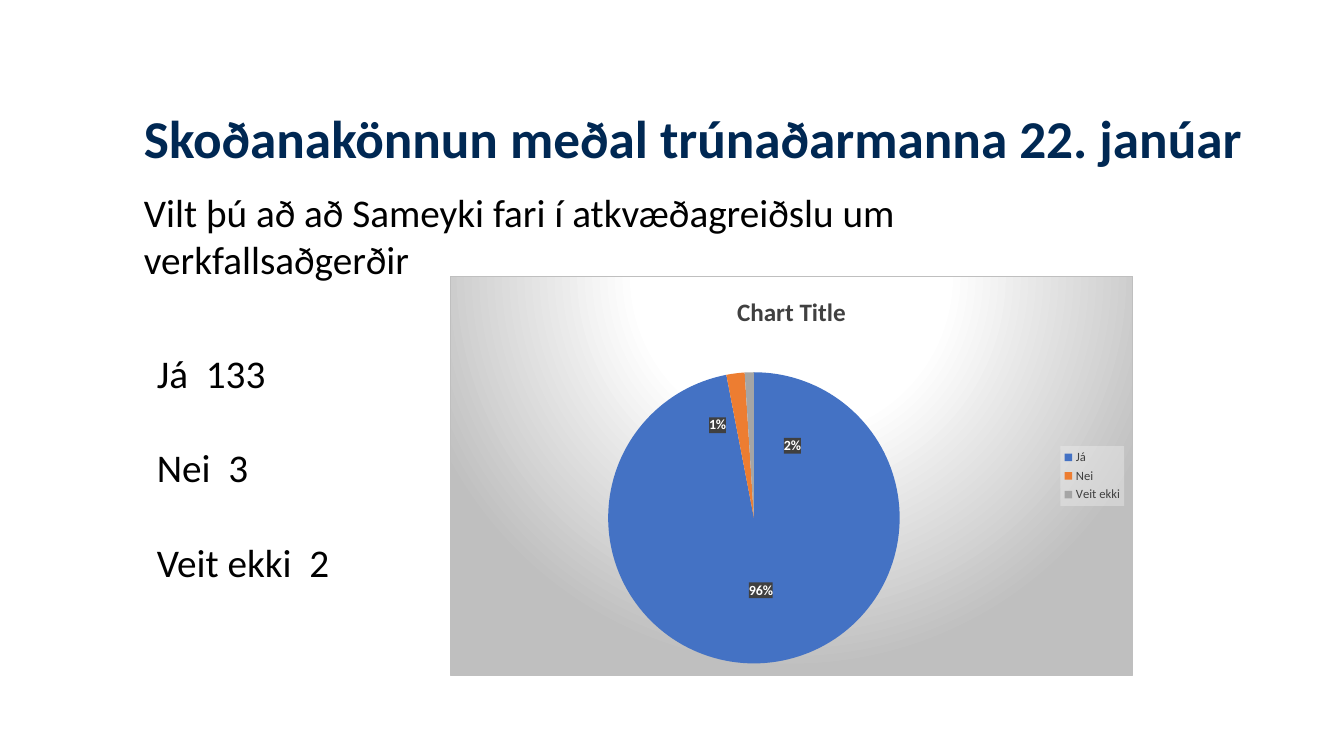
from copy import deepcopy
from dataclasses import dataclass

from pptx import Presentation
from pptx import util as u
from pptx.chart.data import CategoryChartData
from pptx.dml.color import RGBColor
from pptx.enum import chart as ch
from pptx.oxml import ns, parse_xml

PX = 914400 / 100.8


@dataclass(frozen=True)
class Theme:
    font: str = "Calibri"
    navy: str = "002853"
    black: str = "000000"
    dark: str = "404040"
    white: str = "FFFFFF"
    pale: str = "F2F2F2"
    grey: str = "BFBFBF"
    slices: tuple = ("4472C4", "ED7D31", "A5A5A5")
    title: int = 38
    body: int = 28
    chart_title: int = 18
    label: int = 10
    legend: int = 9


T = Theme()


def px(n):
    return u.Emu(round(n * PX))


def style(font, size, color, bold=False):
    font.name = T.font
    font.size = u.Pt(size)
    font.bold = bold
    font.color.rgb = RGBColor.from_string(color)


def add_text(s, box, lines, size, color, bold=False, gap=0, line=None, top=5):
    tf = s.shapes.add_textbox(*map(px, box)).text_frame
    tf.word_wrap = True
    tf.margin_top = px(top)
    for i, words in enumerate(lines):
        p = tf.add_paragraph() if i else tf.paragraphs[0]
        p.text = words
        if i:
            p.space_before = u.Pt(gap)
        if line:
            p.line_spacing = u.Pt(line)
        style(p.runs[0].font, size, color, bold)


# Chart XML helpers
def c_xml(tag, inner):
    return parse_xml(f"<c:{tag} {ns.nsdecls('c', 'a')}>{inner}</c:{tag}>")


def solid(color, alpha):
    return (f'<a:solidFill><a:srgbClr val="{color}">'
            f'<a:alpha val="{alpha * 1000}"/></a:srgbClr></a:solidFill>')


def set_look(owner, inner):
    owner.find(ns.qn("c:txPr")).addprevious(c_xml("spPr", inner))


def layout(**values):
    parts = "".join(f'<c:{k} val="{v}"/>' for k, v in values.items())
    return c_xml("layout", f"<c:manualLayout>{parts}</c:manualLayout>")


def move_label(labels, order, point, dx, dy):
    """Give one slice the series label style at a shifted place."""
    label = c_xml("dLbl", f'<c:idx val="{point}"/>')
    label.append(layout(x=dx, y=dy))
    skipped = (ns.qn("c:dLbl"), ns.qn("c:showLeaderLines"))
    for child in labels:
        if child.tag not in skipped:
            label.append(deepcopy(child))
    labels.insert(order, label)


def set_backdrop(chart):
    stops = "".join(
        f'<a:gs pos="{pos * 1000}"><a:srgbClr val="{color}"/></a:gs>'
        for pos, color in ((0, T.white), (39, T.white), (100, T.grey)))
    set_look(chart._chartSpace, (
        f'<a:gradFill><a:gsLst>{stops}</a:gsLst><a:path path="circle">'
        '<a:fillToRect l="50000" t="-80000" r="50000" b="180000"/></a:path>'
        f'</a:gradFill><a:ln w="{u.Pt(0.75)}"><a:solidFill>'
        f'<a:srgbClr val="{T.grey}"/></a:solidFill></a:ln>'))


def add_pie(s, box, title, answers):
    data = CategoryChartData()
    data.categories = list(answers)
    data.add_series("Series 1", list(answers.values()))
    chart = s.shapes.add_chart(
        ch.XL_CHART_TYPE.PIE, *map(px, box), data).chart
    style(chart.font, T.label, T.black)
    set_backdrop(chart)

    # Title and legend
    chart.has_title = True
    tf = chart.chart_title.text_frame
    tf.text = title
    style(tf.paragraphs[0].runs[0].font, T.chart_title, T.dark, True)
    chart.has_legend = True
    legend = chart.legend
    legend.position = ch.XL_LEGEND_POSITION.RIGHT
    legend.include_in_layout = False
    style(legend.font, T.legend, T.dark)
    set_look(legend._element, solid(T.pale, 39))

    # Plot area and slices
    area = chart._chartSpace.chart.plotArea
    for old in area.findall(ns.qn("c:layout")):
        area.remove(old)
    area.insert(0, layout(layoutTarget="inner", xMode="edge", yMode="edge",
                          x=0.23, y=0.24, w=0.43, h=0.73))
    plot = chart.plots[0]
    plot.vary_by_categories = True
    series = plot.series[0]
    for i, color in enumerate(T.slices):
        fill = series.points[i].format.fill
        fill.solid()
        fill.fore_color.rgb = RGBColor.from_string(color)

    # Labels
    labels = series.data_labels
    labels.show_value = True
    labels.number_format = '0"%"'
    labels.number_format_is_linked = False
    labels.position = ch.XL_LABEL_POSITION.CENTER
    style(labels.font, T.label, T.white, True)
    set_look(labels._element, solid(T.dark, 95))
    for order, shift in enumerate(((1, 0.07, 0), (2, -0.05, -0.05))):
        move_label(labels._element, order, *shift)


def main():
    prs = Presentation()
    prs.slide_width, prs.slide_height = px(1344), px(756)
    s = prs.slides.add_slide(prs.slide_layouts[6])

    # Heading and question
    add_text(s, (134, 80, 1135, 117),
             ["Skoðanakönnun meðal trúnaðarmanna 22. janúar"],
             T.title, T.navy, bold=True, line=60)
    add_text(s, (134, 183, 954, 520),
             ["Vilt þú að að Sameyki fari í atkvæðagreiðslu um verkfallsaðgerðir"],
             T.body, T.black)

    # Shares of the answers
    add_pie(s, (450, 276, 683, 400), "Chart Title",
            {"Já": 96, "Nei": 2, "Veit ekki": 1})

    # Counts of the answers
    add_text(s, (147, 313, 288, 278), ["Já  133", "Nei  3", "Veit ekki  2"],
             T.body, T.black, gap=34, top=36)

    prs.save("out.pptx")


if __name__ == "__main__":
    main()
